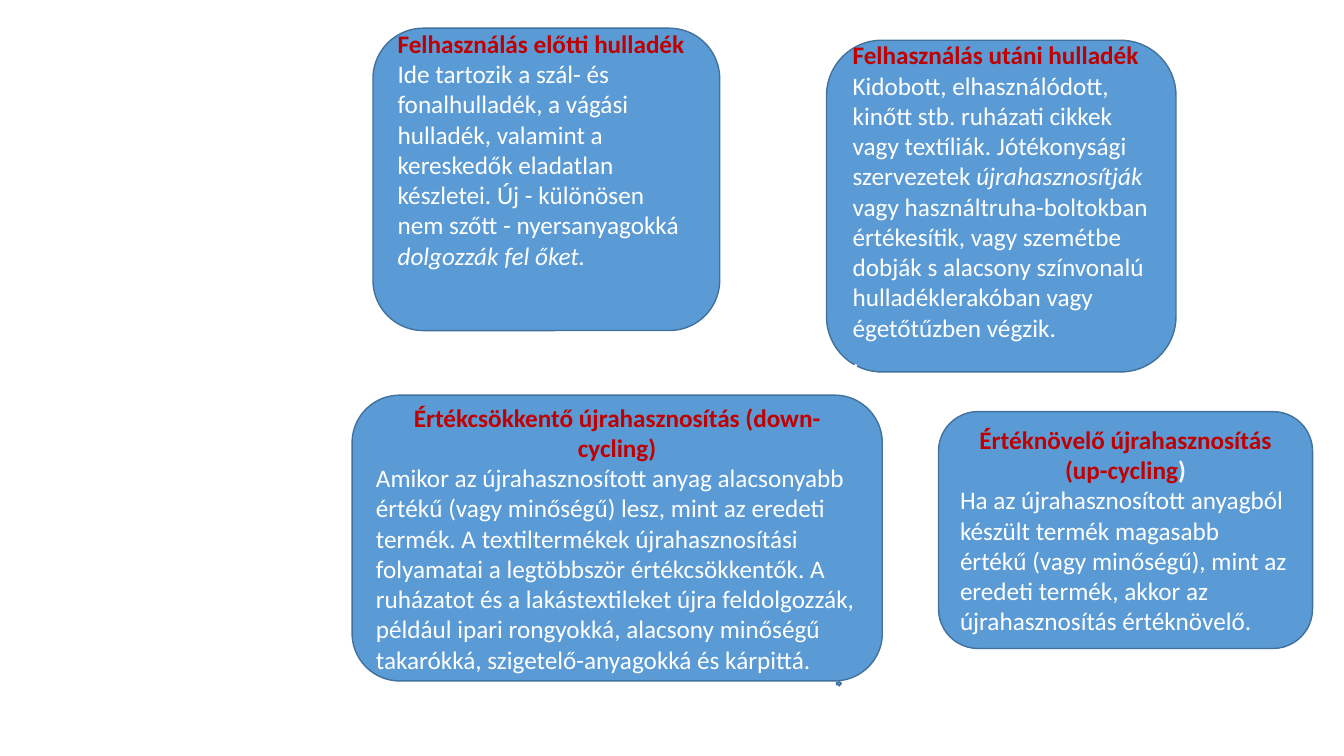
from pptx import Presentation
from pptx.dml.color import RGBColor
from pptx.enum.shapes import MSO_SHAPE as Shape
from pptx.enum.text import MSO_ANCHOR as Anchor, PP_ALIGN as Align
from pptx.util import Inches, Pt

COLORS = {"fill": "5B9BD5", "outline": "41719C", "title": "C00000", "body": "FFFFFF"}
WIDTH, HEIGHT = Inches(13.333), Inches(7.5)
LINE_HEIGHT = Inches(0.3)
MARGIN = Inches(0.05)


def color(name):
    return RGBColor.from_string(COLORS[name])


def add_blue_shape(page, kind, left, top, width, height):
    """Place a shape; lengths are percentages of the slide's size."""
    shape = page.shapes.add_shape(
        kind,
        round(WIDTH * left / 100), round(HEIGHT * top / 100),
        round(WIDTH * width / 100), round(HEIGHT * height / 100),
    )
    shape.shadow.inherit = False
    shape.fill.solid()
    shape.fill.fore_color.rgb = color("fill")
    shape.line.color.rgb = color("outline")
    shape.line.width = Pt(1)
    return shape


def write_paragraph(para, spans, tone, bold=False, align=Align.LEFT):
    """Write spans, each a pair of text and italic flag."""
    para.alignment = align
    para.font.name = "Calibri"
    para.font.size = Pt(18)
    para.font.bold = bold
    para.font.color.rgb = color(tone)
    for text, italic in spans:
        span = para.add_run()
        span.text = text
        if italic:
            span.font.italic = True


def add_waste_box(page, area, title, paragraphs, align=Align.LEFT, free_lines=0):
    """Add a titled rounded box that keeps free_lines empty below its text."""
    box = add_blue_shape(page, Shape.ROUNDED_RECTANGLE, *area)
    frame = box.text_frame
    frame.word_wrap = True
    frame.vertical_anchor = Anchor.MIDDLE
    frame.margin_top = MARGIN
    frame.margin_bottom = MARGIN + free_lines * LINE_HEIGHT
    write_paragraph(frame.paragraphs[0], [(title, False)], "title", True, align)
    for spans in paragraphs:
        write_paragraph(frame.add_paragraph(), spans, "body")
    return box


def main():
    deck = Presentation()
    deck.slide_width, deck.slide_height = WIDTH, HEIGHT
    page = deck.slides.add_slide(deck.slide_layouts[6])

    add_waste_box(
        page, (27.75, 3.73, 25.8, 40), "Felhasználás előtti hulladék",
        [[("Ide tartozik a szál- és fonalhulladék, a vágási hulladék, valamint a "
           "kereskedők eladatlan készletei. Új - különösen nem szőtt - "
           "nyersanyagokká ", False),
          ("dolgozzák fel őket.", True)]],
        free_lines=2,
    )
    add_waste_box(
        page, (61.5, 5.33, 26, 43.87), "Felhasználás utáni hulladék",
        [[("Kidobott, elhasználódott, kinőtt stb. ruházati cikkek vagy textíliák. "
           "Jótékonysági szervezetek ", False),
          ("újrahasznosítják", True),
          (" vagy használtruha-boltokban értékesítik, vagy szemétbe dobják s "
           "alacsony színvonalú hulladéklerakóban vagy égetőtűzben végzik.", False)],
         [(".", False)]],
    )
    add_waste_box(
        page, (26.2, 52.27, 39.45, 37.8),
        "Értékcsökkentő újrahasznosítás (down-cycling)",
        [[("Amikor az újrahasznosított anyag alacsonyabb értékű (vagy minőségű) "
           "lesz, mint az eredeti termék. A textiltermékek újrahasznosítási "
           "folyamatai a legtöbbször értékcsökkentők. A ruházatot és a "
           "lakástextileket újra feldolgozzák, például ipari rongyokká, alacsony "
           "minőségű takarókká, szigetelő-anyagokká és kárpittá.", False)]],
        Align.CENTER,
    )
    add_blue_shape(page, Shape.RIGHT_ARROW, 62.25, 90.1, 0.35, 0.65)
    upcycling = add_waste_box(
        page, (69.83, 54.45, 27.83, 31.33),
        "Értéknövelő újrahasznosítás (up-cycling",
        [[("Ha az újrahasznosított anyagból készült termék magasabb értékű (vagy "
           "minőségű), mint az eredeti termék, akkor az újrahasznosítás "
           "értéknövelő.", False)]],
        Align.CENTER,
    )
    bracket = upcycling.text_frame.paragraphs[0].add_run()
    bracket.text = ")"
    bracket.font.color.rgb = color("body")

    deck.save("out.pptx")


if __name__ == "__main__":
    main()
